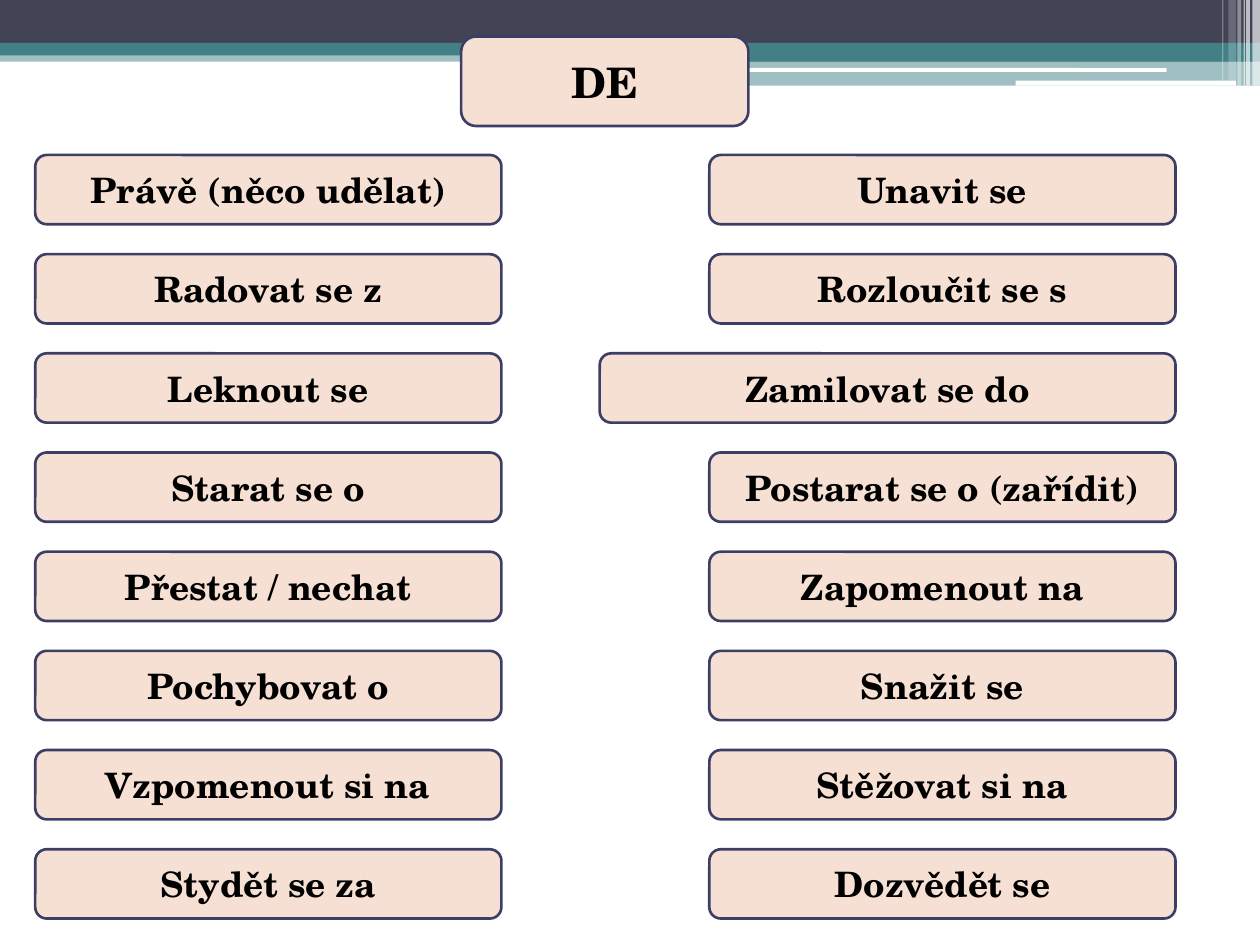
from lxml import etree
from pptx import Presentation
from pptx.dml.color import RGBColor
from pptx.enum.shapes import MSO_SHAPE
from pptx.enum.text import MSO_ANCHOR, PP_ALIGN
from pptx.oxml.ns import qn
from pptx.util import Inches, Pt

RECT = MSO_SHAPE.RECTANGLE
ROUNDED = MSO_SHAPE.ROUNDED_RECTANGLE
MIDDLE = MSO_ANCHOR.MIDDLE
CENTER = PP_ALIGN.CENTER

WHITE = RGBColor(0xFF, 0xFF, 0xFF)
BLACK = RGBColor(0x00, 0x00, 0x00)
SLATE = RGBColor(0x42, 0x44, 0x56)
TEAL = RGBColor(0x43, 0x80, 0x86)
PEACH = RGBColor(0xF5, 0xE0, 0xD3)
INDIGO = RGBColor(0x3D, 0x3E, 0x66)
FONT = "TeX Gyre Schola"

LEFT_PHRASES = [
    "Právě (něco udělat)", "Radovat se z", "Leknout se", "Starat se o",
    "Přestat / nechat", "Pochybovat o", "Vzpomenout si na", "Stydět se za",
]
RIGHT_PHRASES = [
    "Unavit se", "Rozloučit se s", "Zamilovat se do", "Postarat se o (zařídit)",
    "Zapomenout na", "Snažit se", "Stěžovat si na", "Dozvědět se",
]
WIDE_PHRASE = "Zamilovat se do"
WIDE_EXTRA = 0.87


def add_box(s, kind, x, y, w, h, fill, opacity=100):
    sp = s.shapes.add_shape(kind, Inches(x), Inches(y), Inches(w), Inches(h))
    sp.shadow.inherit = False
    sp.line.fill.background()
    sp.fill.solid()
    sp.fill.fore_color.rgb = fill
    if opacity < 100:
        color = sp.fill._xPr.find(qn("a:solidFill"))[0]
        etree.SubElement(color, qn("a:alpha")).set("val", str(opacity * 1000))
    return sp


def set_text(sp, text, size=20, bold=True, color=BLACK, align=CENTER):
    tf = sp.text_frame
    tf.word_wrap = True
    tf.vertical_anchor = MIDDLE
    p = tf.paragraphs[0]
    p.alignment = align
    r = p.add_run()
    r.text = text
    r.font.name = FONT
    r.font.size = Pt(size)
    r.font.bold = bold
    r.font.color.rgb = color


def add_card(s, x, y, w, h, text, size=20):
    sp = add_box(s, ROUNDED, x, y, w, h, PEACH)
    sp.line.color.rgb = INDIGO
    sp.line.width = Pt(1.5)
    set_text(sp, text, size=size)


def add_banner(s, x, y, w):
    add_box(s, RECT, x, y + 0.4, w, 0.09, TEAL, 50)
    add_box(s, RECT, x, y, w, 0.34, SLATE)
    add_box(s, RECT, x, y + 0.34, w, 0.1, TEAL)
    right = x + w
    add_box(s, RECT, right - 4.08, y + 0.39, 4.08, 0.1, TEAL)
    add_box(s, RECT, right - 4.08, y + 0.48, 4.08, 0.2, TEAL, 50)
    add_box(s, ROUNDED, right - 4.09, y + 0.54, 3.35, 0.03, WHITE)
    add_box(s, ROUNDED, right - 1.94, y + 0.64, 1.75, 0.04, WHITE)
    stripes = [
        (0.06, 0.06, 0.68, 65), (0.11, 0.03, 0.68, 65), (0.13, 0.01, 0.68, 60),
        (0.18, 0.03, 0.68, 40), (0.25, 0.06, 0.64, 20), (0.3, 0.01, 0.64, 30),
    ]
    for offset, width, height, opacity in stripes:
        add_box(s, RECT, right - offset, y, width, height, WHITE, opacity)


def add_column(s, x, y, w, h, phrases, card_h=0.55):
    pitch = (h - card_h) / (len(phrases) - 1)
    for i, phrase in enumerate(phrases):
        extra = WIDE_EXTRA if phrase == WIDE_PHRASE else 0
        add_card(s, x - extra, y + i * pitch, w + extra, card_h, phrase)


def main():
    prs = Presentation()
    prs.slide_width, prs.slide_height = Inches(10), Inches(7.5)
    s = prs.slides.add_slide(prs.slide_layouts[6])
    add_banner(s, 0, 0, 10)
    add_card(s, 3.66, 0.29, 2.28, 0.71, "DE", size=24)
    for x, phrases in ((0.28, LEFT_PHRASES), (5.63, RIGHT_PHRASES)):
        add_column(s, x, 1.23, 3.7, 6.06, phrases)
    prs.save("out.pptx")


if __name__ == "__main__":
    main()
